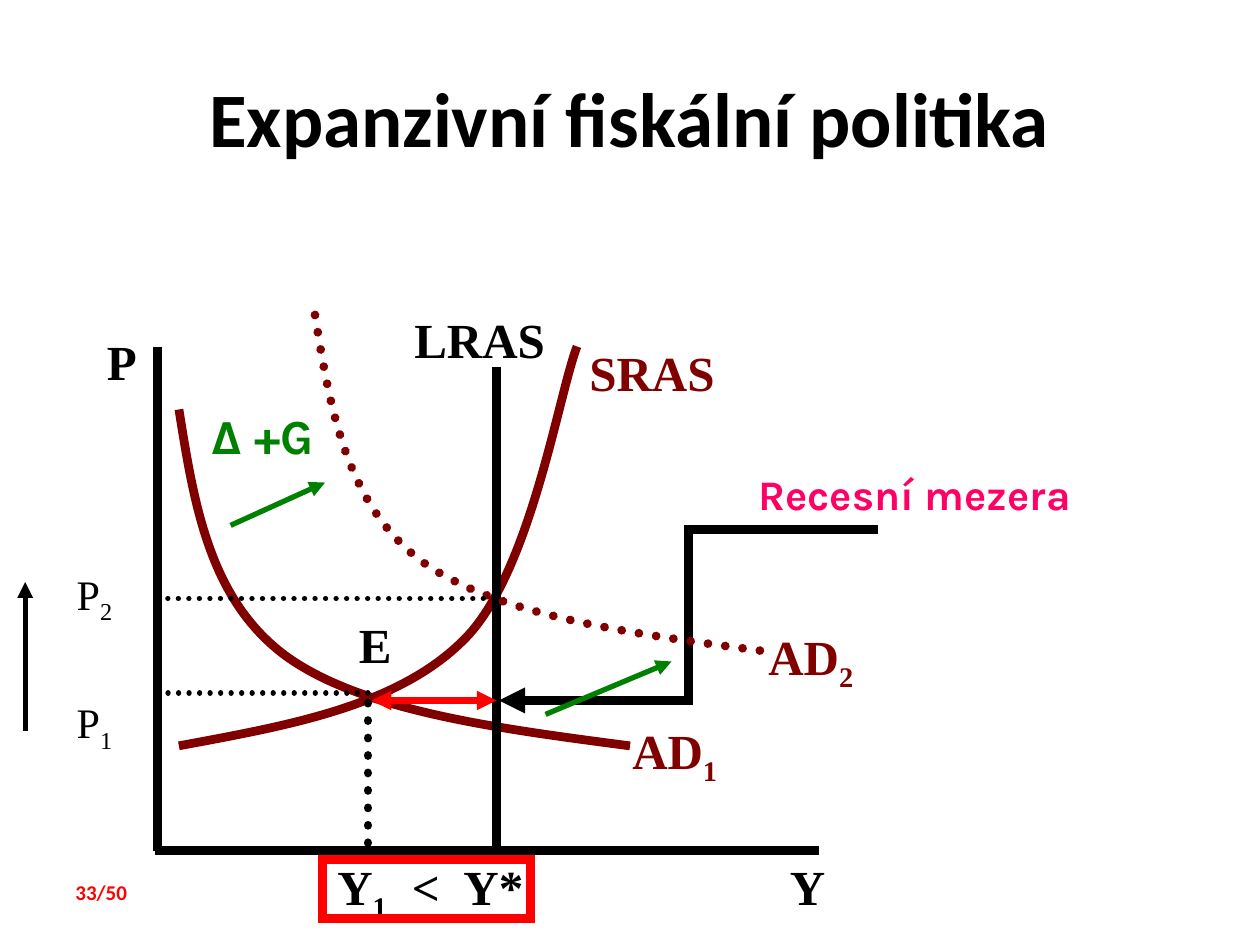
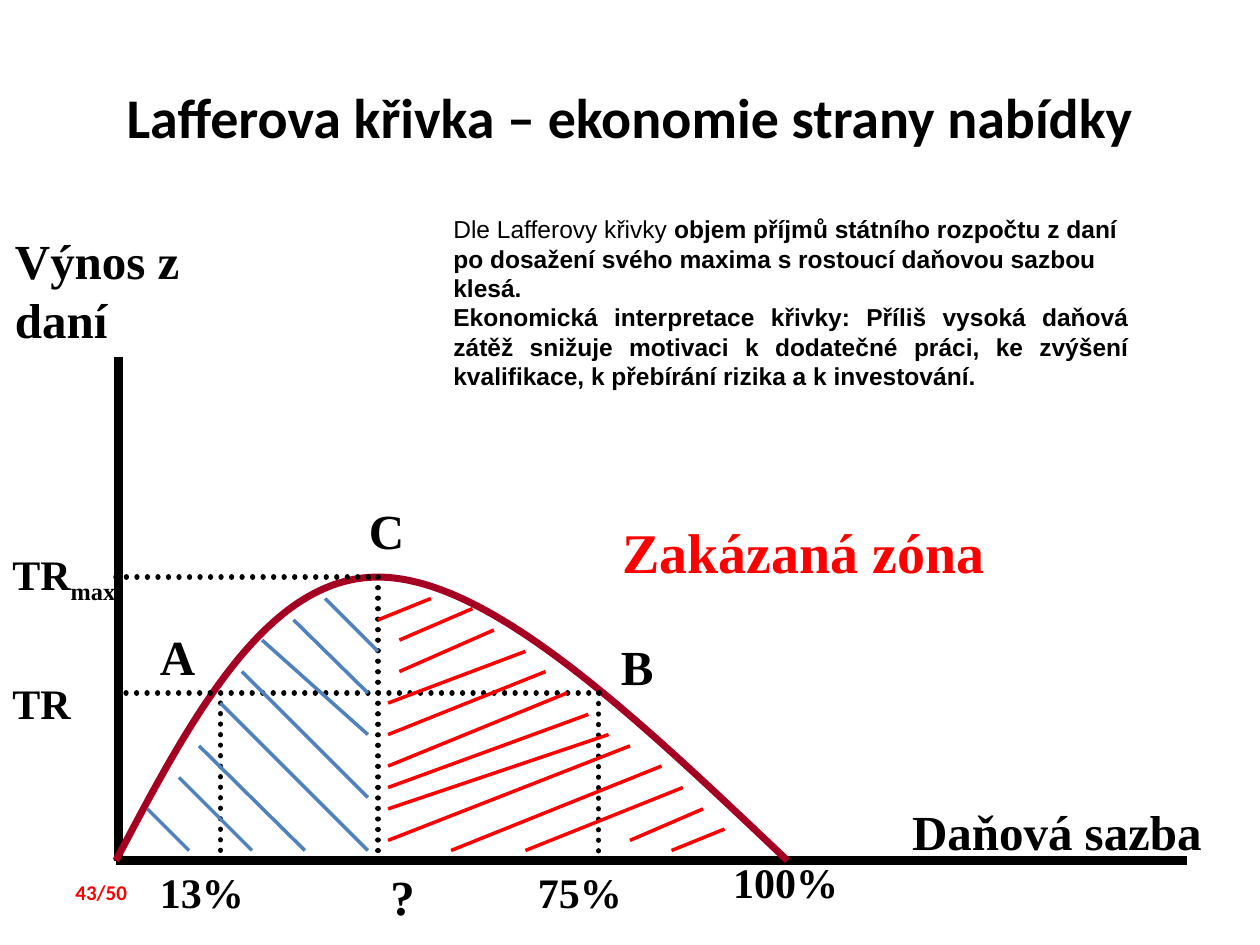
from lxml import etree
from pptx import Presentation
from pptx import util as u
from pptx.dml.color import RGBColor
from pptx.enum import dml, shapes, text
from pptx.oxml.ns import qn

COLORS = {
    "black": "000000",
    "red": "FF0000",
    "maroon": "800000",
    "crimson": "A50021",
    "blue": "4F81BD",
    "green": "008000",
    "pink": "FF0066",
}
SERIF, SANS, HEADING, ACCENT = "Times New Roman", "Arial", "Calibri", "Karla"


def inches(*lengths):
    return [u.Inches(length) for length in lengths]


def color(name):
    return RGBColor.from_string(COLORS[name])


def style_font(font, size, name, font_color, bold):
    font.size, font.name, font.bold = u.Pt(size), name, bold
    font.color.rgb = color(font_color)


def style_line(shape, line_color, width, dotted=False, arrows=()):
    """Set the stroke; arrows names the ends to point: headEnd, tailEnd."""
    shape.line.color.rgb = color(line_color)
    shape.line.width = u.Pt(width)
    stroke = shape.line._get_or_add_ln()
    if dotted:
        shape.line.dash_style = dml.MSO_LINE.ROUND_DOT
        stroke.set("cap", "rnd")
    etree.SubElement(stroke, qn("a:miter"), lim="800000")
    for end in arrows:
        etree.SubElement(stroke, qn(f"a:{end}"), type="triangle")


def add_text_frame(slide, left, top, width, height):
    frame = slide.shapes.add_textbox(*inches(left, top, width, height)).text_frame
    frame.word_wrap = True
    return frame


def add_label(slide, wording, left, top, width, size=28, subscript="",
              ink="black", name=SERIF, bold=True):
    frame = add_text_frame(slide, left, top, width, size / 50)
    frame.text = wording
    paragraph = frame.paragraphs[0]
    if subscript:
        lowered = paragraph.add_run()
        lowered.text = subscript
        lowered._r.get_or_add_rPr().set("baseline", "-25000")
    for run in paragraph.runs:
        style_font(run.font, size, name, ink, bold)


def add_line(slide, start, end, ink="black", width=3, dotted=False, arrows=(),
             route=shapes.MSO_CONNECTOR.STRAIGHT):
    line = slide.shapes.add_connector(route, *inches(*start, *end))
    style_line(line, ink, width, dotted, arrows)
    etree.SubElement(line._element.spPr, qn("a:effectLst"))


def add_curve(slide, points, ink="maroon", width=5, dotted=False):
    """Draw Bézier segments: a start point, then three points for each segment."""
    start, *others = [inches(*point) for point in points]
    builder = slide.shapes.build_freeform(*start)
    builder.add_line_segments(others, close=False)
    curve = builder.convert_to_shape()
    outline = next(curve._element.iter(qn("a:path")))
    legs = outline.findall(qn("a:lnTo"))
    for first in range(0, len(legs), 3):
        segment = etree.SubElement(outline, qn("a:cubicBezTo"))
        for leg in legs[first:first + 3]:
            segment.append(leg[0])
            outline.remove(leg)
    curve.fill.background()
    curve.shadow.inherit = False
    style_line(curve, ink, width, dotted)


def add_axes(slide, x, top, base, right):
    add_line(slide, (x, top), (x, base), width=5.5)
    add_line(slide, (x - 0.02, base), (right, base), width=5)


def add_title(slide, wording, size):
    frame = add_text_frame(slide, 0.5, 0.3, 9, 1.25)
    frame.vertical_anchor = text.MSO_ANCHOR.MIDDLE
    frame.text = wording
    title = frame.paragraphs[0]
    title.alignment = text.PP_ALIGN.CENTER
    style_font(title.runs[0].font, size, HEADING, "black", True)


def add_slide(deck, title, title_size, number):
    slide = deck.slides.add_slide(deck.slide_layouts[6])
    add_title(slide, title, title_size)
    add_label(slide, f"{number}/50", 0.5, 6.93, 0.92, 12, ink="red", name=HEADING)
    return slide


def add_gap_frame(slide):
    frame = slide.shapes.add_shape(shapes.MSO_SHAPE.RECTANGLE,
                                   *inches(2.56, 6.82, 1.65, 0.47))
    frame.fill.background()
    frame.shadow.inherit = False
    style_line(frame, "red", 5)


def build_fiscal_policy(deck):
    slide = add_slide(deck, "Expanzivní fiskální politika", 44, 33)
    add_axes(slide, 1.25, 2.75, 6.75, 6.5)
    add_label(slide, "P", 0.75, 2.58, 0.67)
    add_label(slide, "Y", 6.17, 6.75, 0.67)

    add_curve(slide, [(1.42, 3.25), (1.54, 4), (1.66, 4.75), (2.26, 5.2),
                      (2.86, 5.64), (3.93, 5.78), (5, 5.92)])
    add_label(slide, "AD", 4.92, 5.67, 1.17, subscript="1", ink="maroon")
    add_label(slide, "SRAS", 4.58, 2.67, 1.5, ink="maroon")
    add_curve(slide, [(1.42, 5.92), (2.28, 5.76), (3.15, 5.61), (3.68, 5.08),
                      (4.21, 4.56), (4.43, 3.14), (4.58, 2.75)])
    add_line(slide, (3.94, 6.74), (3.94, 2.91), width=5)
    add_label(slide, "LRAS", 3.19, 2.41, 1.5)
    add_label(slide, "E", 2.75, 4.83, 0.67)

    add_label(slide, "Recesní mezera", 5.92, 3.67, 3.17, 24, ink="pink", name=ACCENT)
    add_line(slide, (2.95, 5.56), (3.94, 5.56), "red", 3.75,
             arrows=("headEnd", "tailEnd"))
    add_line(slide, (6.97, 4.2), (3.96, 5.56), width=5, arrows=("tailEnd",),
             route=shapes.MSO_CONNECTOR.ELBOW)

    add_line(slide, (2.92, 5.58), (2.92, 6.75), width=5, dotted=True)
    add_label(slide, "Y", 2.58, 6.75, 0.67, subscript="1")
    add_label(slide, "<", 3.17, 6.75, 0.5)
    add_label(slide, "Y*", 3.58, 6.75, 0.92)
    add_gap_frame(slide)

    add_curve(slide, [(2.5, 2.5), (2.62, 3.25), (2.75, 4), (3.34, 4.45),
                      (3.94, 4.89), (5.01, 5.03), (6.08, 5.17)], dotted=True)
    add_label(slide, "AD", 6, 4.92, 1.17, subscript="2", ink="maroon")
    for output, price in ((2.92, 5.5), (3.92, 4.75)):
        add_line(slide, (output, price), (1.25, price), dotted=True)

    for start, end in (((1.83, 4.17), (2.58, 3.83)), ((4.33, 5.67), (5.33, 5.25))):
        add_line(slide, start, end, "green", arrows=("tailEnd",))
    add_label(slide, "Δ +G", 1.58, 3.17, 1.33, ink="green", name=ACCENT)
    for level, top in (("1", 5.48), ("2", 4.46)):
        add_label(slide, "P", 0.51, top, 0.71, 24, subscript=level, bold=False)
    add_line(slide, (0.2, 5.8), (0.2, 4.62), arrows=("tailEnd",))


def add_interpretation(slide):
    frame = add_text_frame(slide, 3.5, 1.65, 5.56, 1.51)
    paragraphs = [
        [("Dle Lafferovy křivky ", False),
         ("objem příjmů státního rozpočtu z daní po dosažení svého maxima "
          "s rostoucí daňovou sazbou klesá.", True)],
        [("Ekonomická interpretace křivky: Příliš vysoká daňová zátěž snižuje "
          "motivaci k dodatečné práci, ke zvýšení kvalifikace, k přebírání "
          "rizika a k investování.", True)],
    ]
    for index, parts in enumerate(paragraphs):
        paragraph = frame.add_paragraph() if index else frame.paragraphs[0]
        for wording, bold in parts:
            run = paragraph.add_run()
            run.text = wording
            style_font(run.font, 14, SANS, "black", bold)
    paragraph.alignment = text.PP_ALIGN.JUSTIFY


def add_hatching(slide, strokes, ink):
    for x1, y1, x2, y2 in strokes:
        add_line(slide, (x1, y1), (x2, y2), ink, 2)


def build_laffer_curve(deck):
    slide = add_slide(deck, "Lafferova křivka – ekonomie strany nabídky", 32, 43)
    add_axes(slide, 0.94, 2.83, 6.83, 9.42)
    add_label(slide, "Výnos z daní", 0.02, 1.78, 1.75)
    add_label(slide, "Daňová sazba", 7.14, 6.31, 2.75)
    add_curve(slide, [(0.92, 6.83), (1.51, 5.71), (2.11, 4.58), (3, 4.58),
                      (3.89, 4.58), (5.07, 5.71), (6.25, 6.83)], "crimson", 4)

    for rate, revenue in ((1.75, 5.58), (3, 4.58), (4.75, 5.5)):
        add_line(slide, (rate, revenue), (rate, 6.83), dotted=True)
    for left, right, revenue in ((1, 4.83, 5.5), (0.92, 3, 4.58)):
        add_line(slide, (left, revenue), (right, revenue), dotted=True)

    for point, left, top in (("A", 1.17, 4.92), ("B", 4.83, 5), ("C", 2.83, 3.92)):
        add_label(slide, point, left, top, 0.67)
    add_label(slide, "?", 3, 6.83, 0.58)
    for rate, left, top in (("13%", 1.17, 6.83), ("75%", 4.17, 6.83),
                            ("100%", 5.72, 6.75)):
        add_label(slide, rate, left, top, 1.17, 24)
    for level, top in (("", 5.33), ("max", 4.3)):
        add_label(slide, "TR", 0, top, 1.17, 24, subscript=level)

    add_hatching(slide, [
        (1.17, 6.42, 1.5, 6.75), (1.42, 6.17, 2, 6.75), (1.58, 5.92, 2.42, 6.75),
        (1.75, 5.58, 2.92, 6.75), (1.92, 5.33, 2.92, 6.33), (2.08, 5.08, 2.92, 5.83),
        (2.33, 4.92, 2.92, 5.5), (2.58, 4.75, 3, 5.17),
    ], "blue")
    add_hatching(slide, [
        (3.42, 4.75, 3, 4.92), (3.75, 4.83, 3.17, 5.08), (3.92, 5, 3.17, 5.33),
        (4.17, 5.17, 3.08, 5.58), (4.33, 5.33, 3.08, 5.83), (4.5, 5.5, 3.08, 6.08),
        (4.67, 5.67, 3.08, 6.25), (4.83, 5.83, 3.08, 6.42), (5, 5.92, 3.08, 6.67),
        (5.25, 6.08, 3.58, 6.75), (5.42, 6.25, 4.17, 6.75), (5.58, 6.42, 5, 6.67),
        (5.75, 6.58, 5.33, 6.75),
    ], "red")
    add_label(slide, "Zakázaná zóna", 4.84, 4.06, 3.78, 32, ink="red")
    add_interpretation(slide)


def main():
    deck = Presentation()
    deck.slide_width, deck.slide_height = inches(10, 7.5)
    build_fiscal_policy(deck)
    build_laffer_curve(deck)
    deck.save("out.pptx")


if __name__ == "__main__":
    main()
